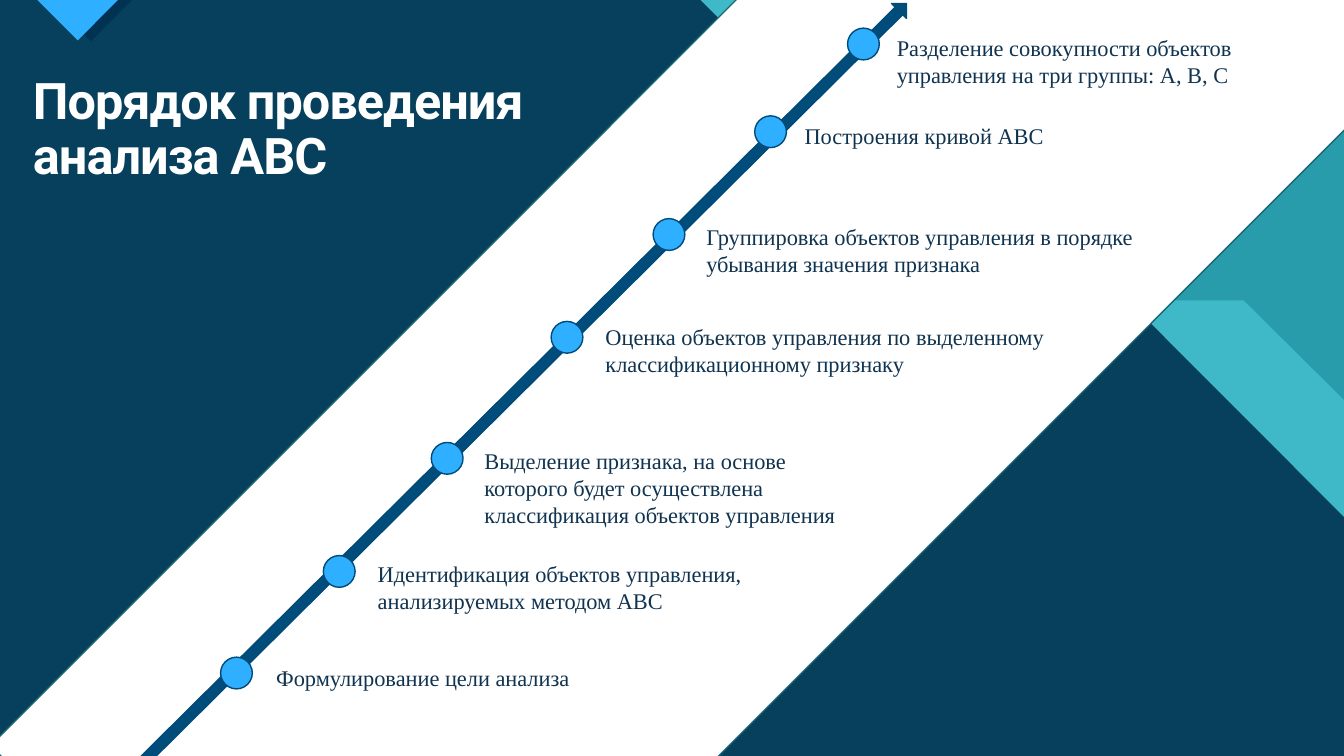
from dataclasses import dataclass

from lxml import etree
from pptx import Presentation
from pptx import util as u
from pptx.dml.color import RGBColor
from pptx.enum import shapes, text
from pptx.oxml.ns import qn


@dataclass(frozen=True)
class Theme:
    teal: str = "299CAB"
    aqua: str = "47C3D3"
    navy: str = "003352"
    blue: str = "2FAFFF"
    white: str = "FFFFFF"
    band_edge: str = "1A6871"
    arrow: str = "004C7B"
    outline: str = "004B79"
    label: str = "103350"
    title_font: str = "Roboto"
    label_font: str = "Times New Roman"
    title_size: int = 36
    label_size: int = 16


@dataclass(frozen=True)
class Box:
    left: float
    top: float
    width: float
    height: float

    def lengths(self) -> tuple:
        return tuple(u.Cm(side) for side in (self.left, self.top, self.width, self.height))


@dataclass(frozen=True)
class Polygon:
    points: tuple
    color: str
    opacity: int = 100


@dataclass(frozen=True)
class Step:
    """Marker corner, label corner, label width and number of label lines."""
    marker: tuple
    label: tuple
    width: float
    lines: int
    wording: str
    wrap: bool = True


THEME = Theme()
WIDTH, HEIGHT = 33.87, 19.05
MARKER_SIZE = 0.8
FIRST_LINE_HEIGHT, NEXT_LINE_HEIGHT = 0.94, 0.68

BOTTOM_CORNERS = ((WIDTH, HEIGHT), (0, HEIGHT))
BACKDROP = (
    Polygon(((0, 0), (20.96, 0), (28.5, 7.57), (31.34, 7.57), (WIDTH, 10.08), *BOTTOM_CORNERS),
            THEME.aqua, 74),
    Polygon(((0, 0), (17.65, 0), (25.2, 7.55), (28.4, 7.55), (WIDTH, 13.03), *BOTTOM_CORNERS),
            THEME.navy, 90),
    Polygon(((1.22, 0), (2.29, 1.04), (3.33, 0)), THEME.navy),
    Polygon(((0.94, 0), (1.96, 1.02), (2.97, 0)), THEME.blue),
)

TITLE = "Порядок проведения анализа АВС"
TITLE_BOX = Box(0.58, 1.8, 14.43, 3.02)
BAND_BOX = Box(-1.17, 3.38, 38.13, 13.16)
ARROW_BOX = Box(12.73, -4.01, 0.53, 27.76)

STEPS = (
    Step((5.56, 16.56), (6.71, 16.61), 8.31, 1, "Формулирование цели анализа"),
    Step((8.15, 14), (9.27, 14), 9.78, 2,
         "Идентификация объектов управления, анализируемых методом АВС"),
    Step((10.87, 11.15), (11.96, 11.15), 10.19, 3,
         "Выделение признака, на основе которого будет осуществлена "
         "классификация объектов управления"),
    Step((13.89, 8.1), (15.01, 8.03), 11.99, 2,
         "Оценка объектов управления по выделенному классификационному признаку"),
    Step((16.46, 5.51), (17.55, 5.51), 12.88, 2,
         "Группировка объектов управления в порядке убывания значения признака"),
    Step((19.02, 2.92), (19.99, 2.95), 6.6, 1, "Построения кривой АВС", wrap=False),
    Step((21.36, 0.71), (22.35, 0.74), 11.76, 2,
         "Разделение совокупности объектов управления на три группы: А, В, С"),
)


def draw_polygon(slide, polygon: Polygon) -> None:
    start, *others = [(u.Cm(x), u.Cm(y)) for x, y in polygon.points]
    builder = slide.shapes.build_freeform(*start)
    builder.add_line_segments(others, close=True)
    shape = builder.convert_to_shape()
    shape.shadow.inherit = False
    shape.line.fill.background()
    shape.fill.solid()
    shape.fill.fore_color.rgb = RGBColor.from_string(polygon.color)
    if polygon.opacity < 100:
        color = shape.fill._xPr.find(f".//{qn('a:srgbClr')}")
        etree.SubElement(color, qn("a:alpha"), val=str(polygon.opacity * 1000))


def draw_shape(container, kind: shapes.MSO_SHAPE, box: Box, fill: str, line: str,
               rotation: float = 0) -> None:
    shape = container.shapes.add_shape(kind, *box.lengths())
    shape.shadow.inherit = False
    shape.rotation = rotation
    shape.fill.solid()
    shape.fill.fore_color.rgb = RGBColor.from_string(fill)
    shape.line.color.rgb = RGBColor.from_string(line)
    shape.line.width = u.Pt(1)


def draw_text(slide, wording: str, box: Box, font_name: str, size: int, color: str,
              wrap: bool = True):
    """Add a one-paragraph text box and return the paragraph."""
    frame = slide.shapes.add_textbox(*box.lengths()).text_frame
    frame.word_wrap = wrap
    frame.auto_size = text.MSO_AUTO_SIZE.SHAPE_TO_FIT_TEXT
    frame.text = wording
    paragraph = frame.paragraphs[0]
    paragraph.alignment = text.PP_ALIGN.LEFT if wrap else text.PP_ALIGN.CENTER
    font = paragraph.runs[0].font
    font.name = font_name
    font.size = u.Pt(size)
    font.color.rgb = RGBColor.from_string(color)
    return paragraph


def draw_title(slide) -> None:
    paragraph = draw_text(slide, TITLE, TITLE_BOX, THEME.title_font, THEME.title_size, THEME.white)
    paragraph.line_spacing = 0.9
    font = paragraph.runs[0].font
    font.bold = True
    font._rPr.set("spc", "-70")


def draw_timeline(slide) -> None:
    timeline = slide.shapes.add_group_shape()
    draw_shape(timeline, shapes.MSO_SHAPE.UP_ARROW, ARROW_BOX, THEME.arrow, THEME.outline, 45.2)
    for step in STEPS:
        marker_box = Box(*step.marker, MARKER_SIZE, MARKER_SIZE)
        draw_shape(timeline, shapes.MSO_SHAPE.OVAL, marker_box, THEME.blue, THEME.outline)
    for step in STEPS:
        height = FIRST_LINE_HEIGHT + (step.lines - 1) * NEXT_LINE_HEIGHT
        draw_text(slide, step.wording, Box(*step.label, step.width, height),
                  THEME.label_font, THEME.label_size, THEME.label, step.wrap)


def main() -> None:
    presentation = Presentation()
    presentation.slide_width, presentation.slide_height = u.Cm(WIDTH), u.Cm(HEIGHT)
    slide = presentation.slides.add_slide(presentation.slide_layouts[6])
    slide.background.fill.solid()
    slide.background.fill.fore_color.rgb = RGBColor.from_string(THEME.teal)
    for polygon in BACKDROP:
        draw_polygon(slide, polygon)
    draw_title(slide)
    draw_shape(slide, shapes.MSO_SHAPE.RECTANGLE, BAND_BOX, THEME.white, THEME.band_edge, 315)
    draw_timeline(slide)
    presentation.save("out.pptx")


if __name__ == "__main__":
    main()
